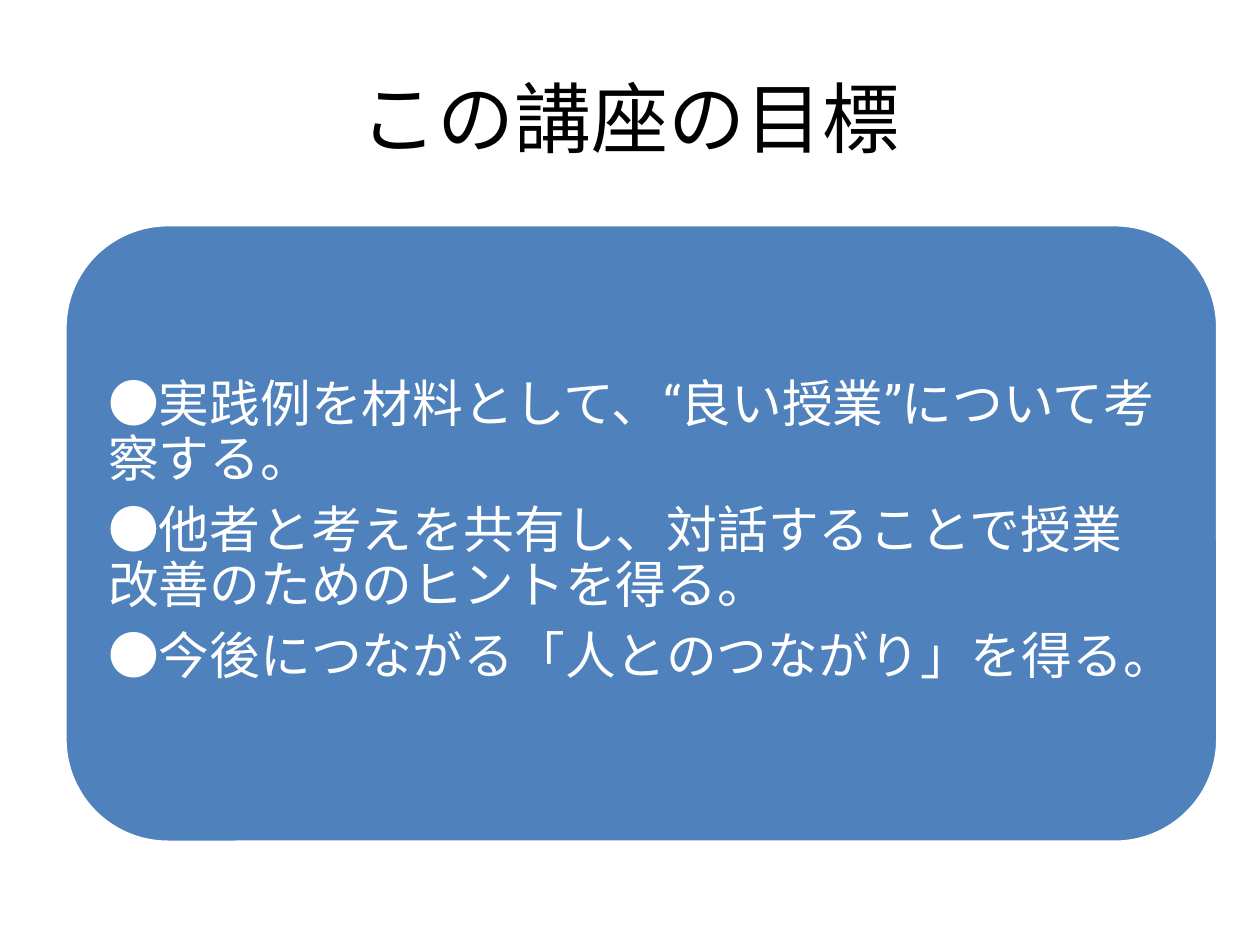
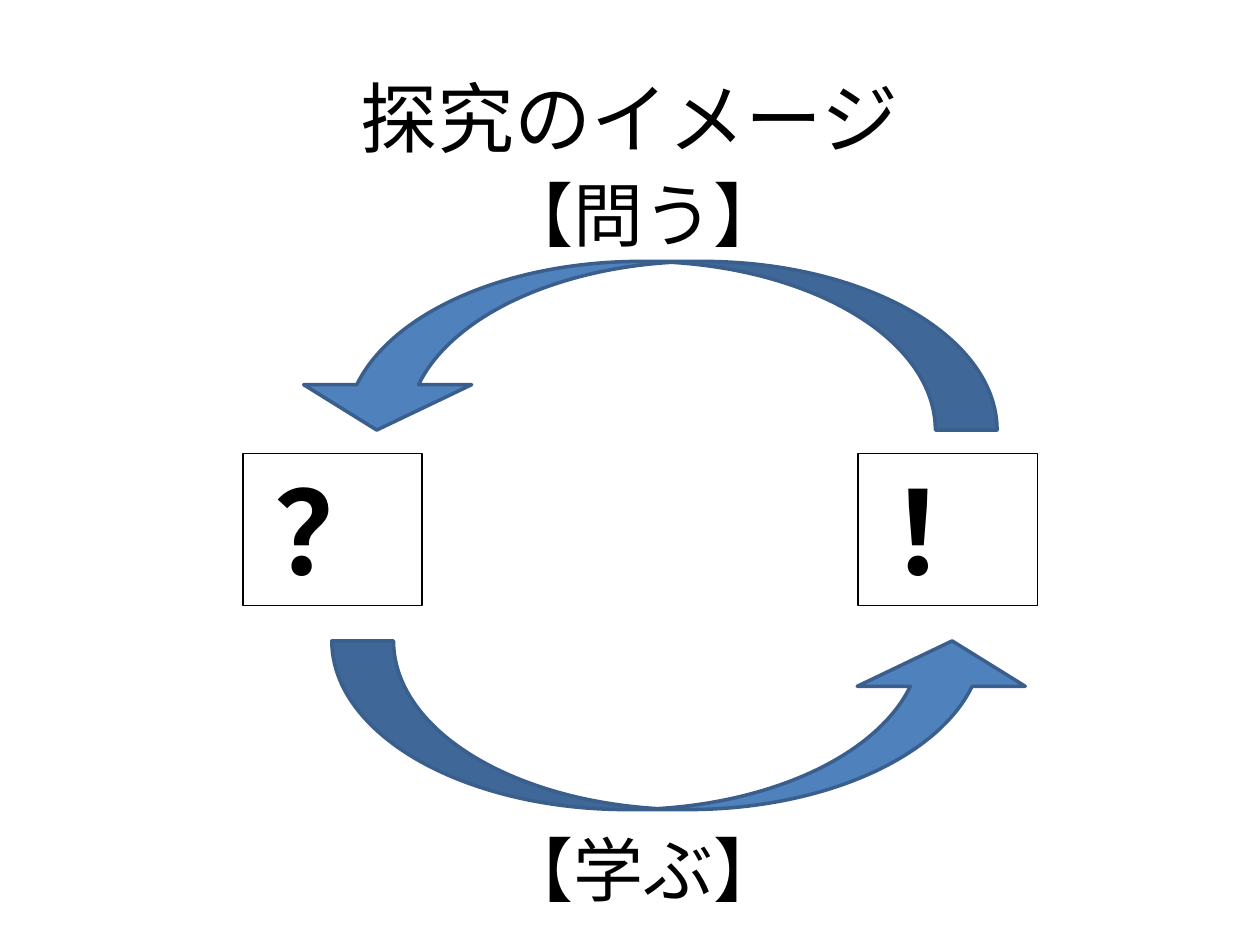
from lxml.etree import SubElement
from pptx import Presentation
from pptx.dml.color import RGBColor
from pptx.enum.shapes import MSO_SHAPE
from pptx.enum.text import MSO_ANCHOR, MSO_AUTO_SIZE, PP_ALIGN
from pptx.oxml.ns import qn
from pptx.util import Cm, Pt

BLACK = RGBColor(0x00, 0x00, 0x00)
WHITE = RGBColor(0xFF, 0xFF, 0xFF)
BLUE = RGBColor(0x4F, 0x81, 0xBD)
DARK_BLUE = RGBColor(0x3A, 0x5F, 0x8C)
FONT = "Roboto"


def add_span(para, text, size, color=BLACK, bold=False):
    """Add one run, with the font set for Latin and East Asian letters."""
    span = para.add_run()
    span.text = text
    span.font.name = FONT
    span.font.size = Pt(size)
    span.font.bold = bold
    span.font.color.rgb = color
    SubElement(span.font._element, qn("a:ea"), typeface=FONT)


def add_titled_page(deck, title):
    page = deck.slides.add_slide(deck.slide_layouts[5])
    box = page.shapes.title
    box.left, box.top, box.width, box.height = Cm(1.27), Cm(0.76), Cm(22.86), Cm(3.18)
    box.text_frame.vertical_anchor = MSO_ANCHOR.MIDDLE
    para = box.text_frame.paragraphs[0]
    para.alignment = PP_ALIGN.CENTER
    add_span(para, title, 44)
    return page


deck = Presentation()
deck.slide_width, deck.slide_height = Cm(25.4), Cm(19.05)

# Goals of the course
page = add_titled_page(deck, "この講座の目標")
goals_group = page.shapes.add_group_shape()
panel = goals_group.shapes.add_shape(
    MSO_SHAPE.ROUNDED_RECTANGLE, Cm(1.31), Cm(4.53), Cm(23.24), Cm(12.45))
panel.shadow.inherit = False
panel.fill.solid()
panel.fill.fore_color.rgb = BLUE
panel.line.color.rgb = WHITE
panel.line.width = Pt(2)

goals_box = goals_group.shapes.add_textbox(Cm(1.88), Cm(5.11), Cm(22.02), Cm(11.23))
frame = goals_box.text_frame
frame.word_wrap = True
frame.vertical_anchor = MSO_ANCHOR.MIDDLE
frame.margin_left = frame.margin_right = Cm(0.3)
frame.margin_top = frame.margin_bottom = Cm(0.3)
goals = [
    "●実践例を材料として、“良い授業”について考察する。",
    "●他者と考えを共有し、対話することで授業改善のためのヒントを得る。",
    "●今後につながる「人とのつながり」を得る。",
]
for number, goal in enumerate(goals):
    para = frame.add_paragraph() if number else frame.paragraphs[0]
    para.line_spacing = 0.9
    para.space_after = Pt(9.5)
    add_span(para, goal, 29, WHITE)

# Cycle of inquiry
page = add_titled_page(deck, "探究のイメージ")
for mark, left in [("？", 4.9), ("！", 17.3)]:
    mark_box = page.shapes.add_textbox(Cm(left), Cm(9.14), Cm(3.61), Cm(3.07))
    mark_box.line.color.rgb = BLACK
    mark_box.line.width = Pt(0.75)
    frame = mark_box.text_frame
    frame.word_wrap = True
    frame.auto_size = MSO_AUTO_SIZE.SHAPE_TO_FIT_TEXT
    para = frame.paragraphs[0]
    para.alignment = PP_ALIGN.CENTER
    add_span(para, mark, 66, bold=True)

for left, top, rotation in [(12.09, 7.52, 270), (11.3, -0.13, 90)]:
    arrow = page.shapes.add_shape(
        MSO_SHAPE.CURVED_RIGHT_ARROW, Cm(left), Cm(top), Cm(3.4), Cm(14.2))
    arrow.rotation = rotation
    for index, value in enumerate([0.366, 0.997, 0.269]):
        arrow.adjustments[index] = value
    arrow.shadow.inherit = False
    arrow.fill.solid()
    arrow.fill.fore_color.rgb = BLUE
    arrow.line.color.rgb = DARK_BLUE
    arrow.line.width = Pt(2)

for label, top in [("【学ぶ】", 16.54), ("【問う】", 3.33)]:
    label_box = page.shapes.add_textbox(Cm(9.91), Cm(top), Cm(6.22), Cm(1.96))
    frame = label_box.text_frame
    frame.word_wrap = False
    frame.auto_size = MSO_AUTO_SIZE.SHAPE_TO_FIT_TEXT
    add_span(frame.paragraphs[0], label, 40)

deck.save("out.pptx")
